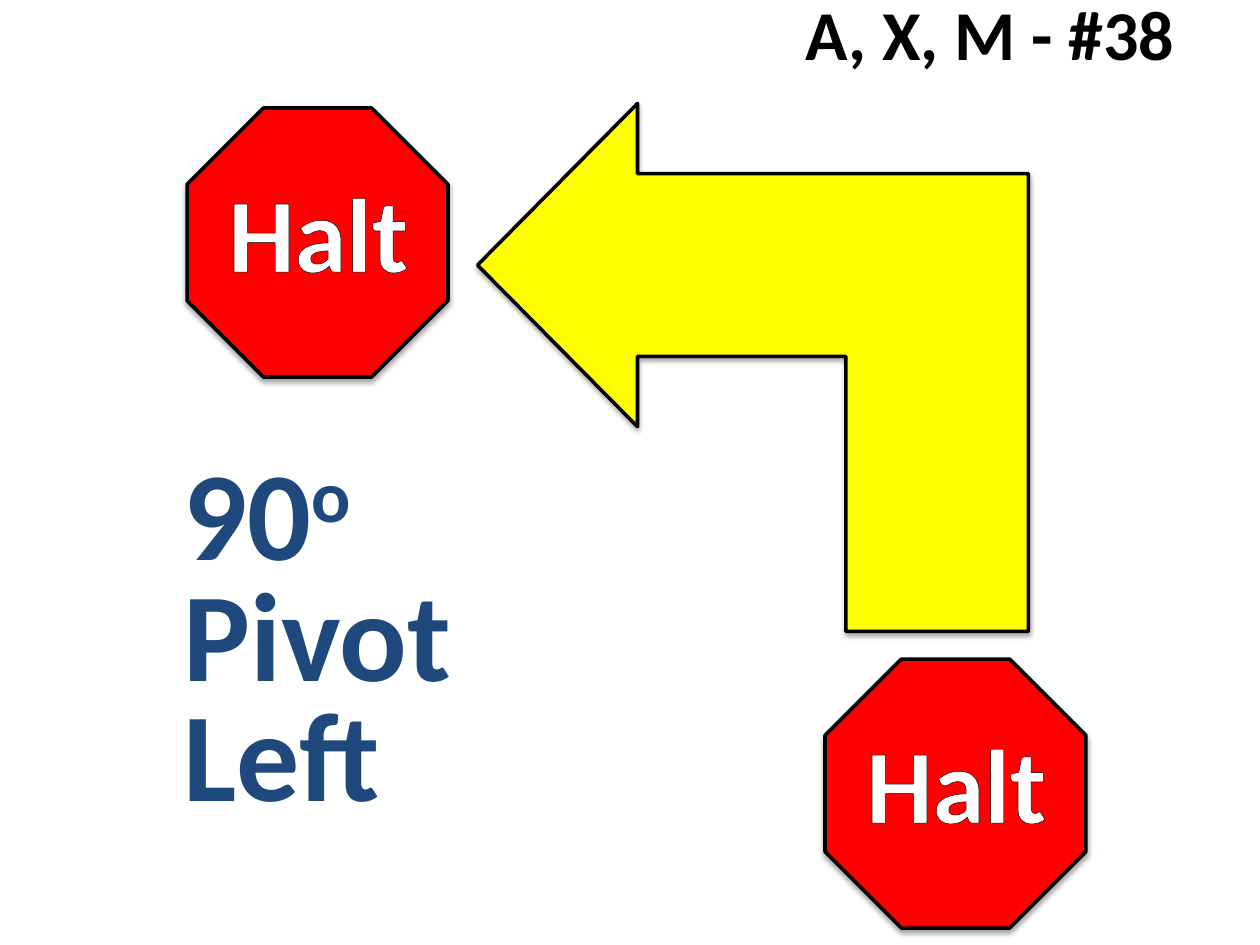
import pptx
import pptx.dml.color
import pptx.enum.shapes
import pptx.enum.text
import pptx.oxml
import pptx.oxml.ns
import pptx.util

PX = 914400 / 126
RGBColor = pptx.dml.color.RGBColor
Shape = pptx.enum.shapes.MSO_SHAPE
Align = pptx.enum.text.PP_ALIGN

BLACK = RGBColor(0x00, 0x00, 0x00)
WHITE = RGBColor(0xFF, 0xFF, 0xFF)
RED = RGBColor(0xFF, 0x00, 0x00)
YELLOW = RGBColor(0xFF, 0xFF, 0x00)
NAVY = RGBColor(0x1F, 0x49, 0x7D)

LABEL_FONT = {"size": pptx.util.Pt(40), "name": "Calibri", "bold": True}
HALT_FONT = {**LABEL_FONT, "size": pptx.util.Pt(60)}
TITLE_FONT = {**LABEL_FONT, "size": pptx.util.Pt(72)}

NS = pptx.oxml.ns.nsdecls("a")
TEXT_OUTLINE = (f'<a:ln {NS} w="10541"><a:solidFill><a:srgbClr val="000000"/>'
                '</a:solidFill></a:ln>')
SHADOW = (f'<a:effectLst {NS}><a:outerShdw blurRad="39370" dist="22860" '
          'dir="5400000" rotWithShape="0"><a:srgbClr val="000000">'
          '<a:alpha val="35000"/></a:srgbClr></a:outerShdw></a:effectLst>')


def px(*lengths):
    return [round(length * PX) for length in lengths]


def set_all(target, values):
    for key, value in values.items():
        setattr(target, key, value)


def add_run(paragraph, text, font, color, outlined=False):
    run = paragraph.add_run()
    run.text = text
    set_all(run.font, font)
    run.font.color.rgb = color
    if outlined:
        run.font._element.insert(0, pptx.oxml.parse_xml(TEXT_OUTLINE))
    return run


def add_sign_shape(shapes, kind, box, color):
    """Add a filled shape with a black line and a soft shadow below it."""
    sign = shapes.add_shape(kind, *px(*box))
    sign.fill.solid()
    sign.fill.fore_color.rgb = color
    sign.line.color.rgb = BLACK
    sign.line.width = pptx.util.Pt(2)
    sign.shadow.inherit = False
    properties = sign._element.spPr
    properties.remove(properties.find(pptx.oxml.ns.qn("a:effectLst")))
    properties.append(pptx.oxml.parse_xml(SHADOW))
    return sign


def add_halt_sign(slide, left, top):
    group = slide.shapes.add_group_shape()
    add_sign_shape(group.shapes, Shape.OCTAGON, (left, top, 261, 269), RED)
    word = group.shapes.add_textbox(*px(left + 29, top + 53, 213, 140)).text_frame
    word.word_wrap = True
    add_run(word.paragraphs[0], "Halt", HALT_FONT, WHITE, outlined=True)


def add_turn_arrow(slide):
    arrow = add_sign_shape(slide.shapes, Shape.BENT_UP_ARROW,
                           (489, 92, 528, 551), YELLOW)
    arrow.rotation = 270
    for index, ratio in enumerate((0.346, 0.306, 0.303)):
        arrow.adjustments[index] = ratio


def add_class_label(slide):
    frame = slide.shapes.add_textbox(*px(789, -16, 398, 97)).text_frame
    frame.word_wrap = False
    label = frame.paragraphs[0]
    label.alignment = Align.RIGHT
    add_run(label, "A, X, M - #38", LABEL_FONT, BLACK)


def fill_title(slide):
    title = slide.shapes.title
    set_all(title, dict(zip(("left", "top", "width", "height"),
                            px(171, 457, 301, 384))))
    frame = title.text_frame
    set_all(frame, {"word_wrap": True,
                    "auto_size": pptx.enum.text.MSO_AUTO_SIZE.NONE,
                    "vertical_anchor": pptx.enum.text.MSO_ANCHOR.TOP})
    for index, line in enumerate(("90", "Pivot", "Left")):
        paragraph = frame.add_paragraph() if index else frame.paragraphs[0]
        set_all(paragraph, {"alignment": Align.LEFT, "line_spacing": 0.8})
        add_run(paragraph, line, TITLE_FONT, NAVY, outlined=True)
    degree = add_run(frame.paragraphs[0], "o", TITLE_FONT, NAVY, outlined=True)
    degree.font._element.set("baseline", "30000")


def main():
    deck = pptx.Presentation()
    deck.slide_width, deck.slide_height = px(1260, 945)
    slide = deck.slides.add_slide(deck.slide_layouts[5])
    add_class_label(slide)
    fill_title(slide)
    for left, top in ((187, 108), (825, 659)):
        add_halt_sign(slide, left, top)
    add_turn_arrow(slide)
    deck.save("out.pptx")


if __name__ == "__main__":
    main()
